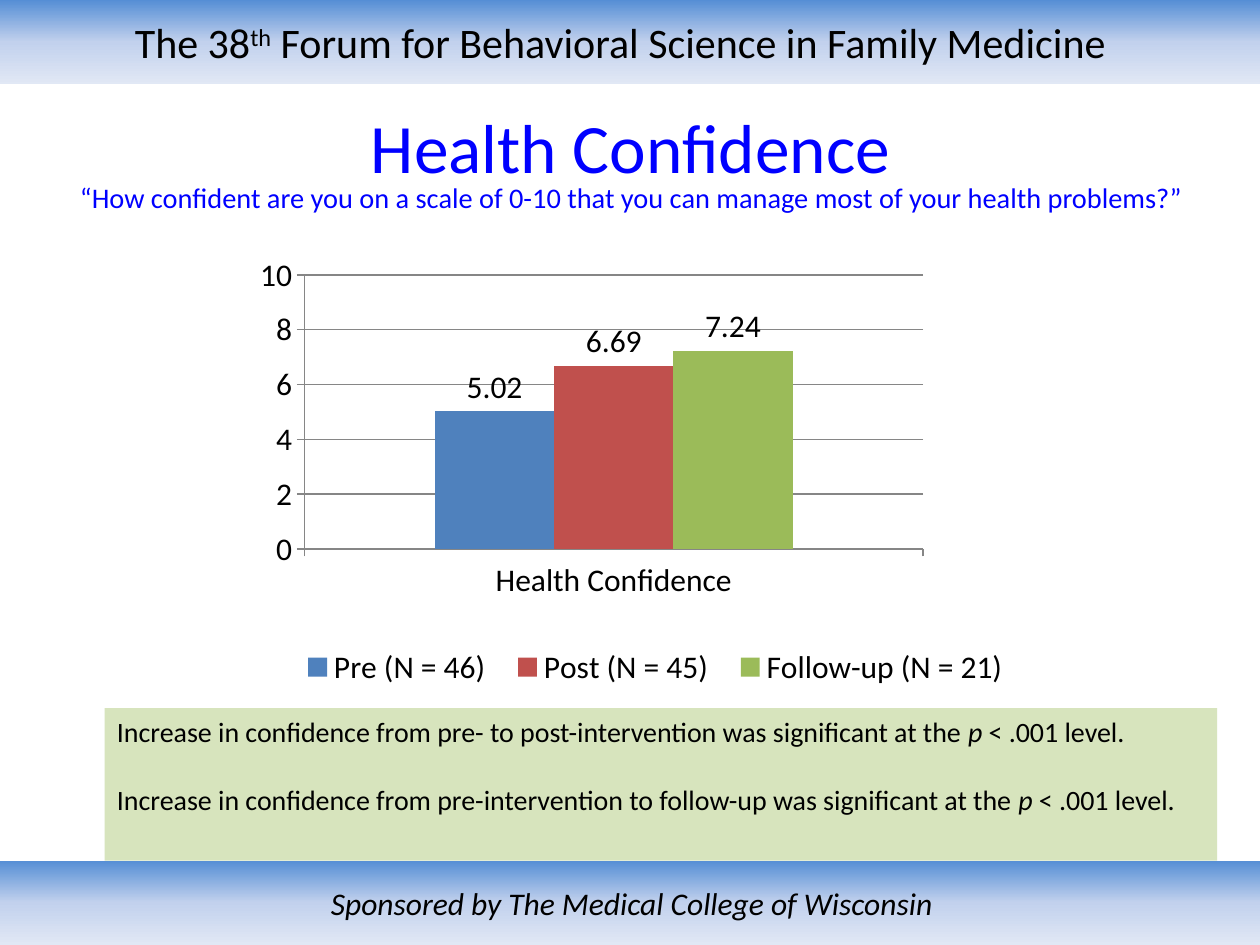
from lxml import etree
from pptx import Presentation
from pptx.chart.data import CategoryChartData
from pptx.dml.color import RGBColor
from pptx.enum.chart import XL_CHART_TYPE, XL_LABEL_POSITION, XL_LEGEND_POSITION, XL_TICK_MARK
from pptx.enum.shapes import MSO_SHAPE
from pptx.enum.text import MSO_ANCHOR, PP_ALIGN
from pptx.oxml import parse_xml
from pptx.oxml.ns import nsdecls, qn
from pptx.util import Inches, Pt

RECTANGLE = MSO_SHAPE.RECTANGLE
CENTER, LEFT = PP_ALIGN.CENTER, PP_ALIGN.LEFT
MIDDLE, TOP, BOTTOM = MSO_ANCHOR.MIDDLE, MSO_ANCHOR.TOP, MSO_ANCHOR.BOTTOM
COLUMNS = XL_CHART_TYPE.COLUMN_CLUSTERED
OUTSIDE = XL_TICK_MARK.OUTSIDE

FONT = "Calibri"
COLORS = {
    "text": "000000", "title": "0000FF", "note": "D7E4BD", "grid": "868686",
    "pre": "4F81BD", "post": "C0504D", "follow_up": "9BBB59",
}
BAND_STOPS = [(0, "558ED5"), (50, "C2D1ED"), (100, "E1E8F5")]
SERIES = [
    ("Pre (N = 46)", 5.02, "pre"),
    ("Post (N = 45)", 6.69, "post"),
    ("Follow-up (N = 21)", 7.24, "follow_up"),
]
FINDINGS = [
    "Increase in confidence from pre- to post-intervention was significant at the ",
    "Increase in confidence from pre-intervention to follow-up was significant at the ",
]


def rgb(name):
    return RGBColor.from_string(COLORS[name])


def style_font(font, size, color="text"):
    font.name = FONT
    font.size = Pt(size)
    font.color.rgb = rgb(color)


def add_runs(paragraph, texts, size, color="text", align=LEFT):
    """Add one run per text, in a common style, and return the runs."""
    paragraph.alignment = align
    runs = []
    for text in texts:
        run = paragraph.add_run()
        run.text = text
        style_font(run.font, size, color)
        runs.append(run)
    return runs


def add_rectangle(slide, left, top, width, height, anchor):
    shape = slide.shapes.add_shape(
        RECTANGLE, Inches(left), Inches(top), Inches(width), Inches(height))
    shape.shadow.inherit = False
    shape.line.fill.background()
    shape.text_frame.word_wrap = True
    shape.text_frame.vertical_anchor = anchor
    return shape


def add_band(slide, top, width, texts, size):
    """Add a full-width band with a vertical gradient; return its runs."""
    shape = add_rectangle(slide, 0, top, width, 0.67, MIDDLE)
    stops = "".join(
        f'<a:gs pos="{position * 1000}"><a:srgbClr val="{color}"/></a:gs>'
        for position, color in BAND_STOPS)
    gradient = parse_xml(
        f'<a:gradFill {nsdecls("a")} rotWithShape="1"><a:gsLst>{stops}</a:gsLst>'
        '<a:lin ang="5400000" scaled="0"/></a:gradFill>')
    shape.element.spPr.find(qn("a:prstGeom")).addnext(gradient)
    return add_runs(shape.text_frame.paragraphs[0], texts, size, align=CENTER)


def add_title(slide, heading, question):
    box = slide.shapes.add_textbox(Inches(0.17), Inches(1), Inches(9.67), Inches(0.75))
    frame = box.text_frame
    frame.word_wrap = True
    frame.vertical_anchor = BOTTOM
    frame.margin_top = 0
    add_runs(frame.paragraphs[0], [heading], 39.6, "title", CENTER)
    paragraph = frame.add_paragraph()
    paragraph.line_spacing = 0.78
    add_runs(paragraph, [question], 16.2, "title", CENTER)


def manual_layout(x, y, width, height, inner=False):
    """Build a chart layout from fractions of the chart area."""
    layout = etree.Element(qn("c:layout"))
    manual = etree.SubElement(layout, qn("c:manualLayout"))
    values = [("layoutTarget", "inner")] if inner else []
    values += [("xMode", "edge"), ("yMode", "edge"),
               ("x", x), ("y", y), ("w", width), ("h", height)]
    for tag, value in values:
        etree.SubElement(manual, qn(f"c:{tag}")).set("val", str(value))
    return layout


def add_confidence_chart(slide):
    data = CategoryChartData(number_format="General")
    data.categories = ["Health Confidence"]
    for name, value, _ in SERIES:
        data.add_series(name, [value])
    chart = slide.shapes.add_chart(
        COLUMNS, Inches(1.83), Inches(1.92), Inches(7.33), Inches(3.75), data).chart
    chart.has_title = False
    style_font(chart.font, 18)

    # Columns and value labels
    plot = chart.plots[0]
    plot.gap_width = 219
    plot.overlap = 0
    plot.vary_by_categories = False
    for series, (_, _, color) in zip(plot.series, SERIES):
        series.format.fill.solid()
        series.format.fill.fore_color.rgb = rgb(color)
        labels = series.data_labels
        labels.show_value = True
        labels.position = XL_LABEL_POSITION.OUTSIDE_END

    # Axes
    value_axis = chart.value_axis
    value_axis.minimum_scale, value_axis.maximum_scale = 0, 10
    value_axis.major_unit = 2
    value_axis.has_major_gridlines = True
    for axis in (value_axis, chart.category_axis):
        axis.major_tick_mark = OUTSIDE
    for part in (value_axis, chart.category_axis, value_axis.major_gridlines):
        part.format.line.color.rgb = rgb("grid")
        part.format.line.width = Pt(0.75)

    # Legend and placement
    chart.has_legend = True
    legend = chart.legend
    legend.position = XL_LEGEND_POSITION.BOTTOM
    legend.include_in_layout = False
    plot_area = chart.element.find(f".//{qn('c:plotArea')}")
    for old_layout in chart.element.findall(f".//{qn('c:layout')}"):
        old_layout.getparent().remove(old_layout)
    plot_area.insert(0, manual_layout(0.08, 0.07, 0.67, 0.58, inner=True))
    legend_position = chart.element.find(f".//{qn('c:legendPos')}")
    legend_position.addnext(manual_layout(0.06, 0.84, 0.8, 0.12))


def add_findings(slide):
    shape = add_rectangle(slide, 0.83, 5.62, 8.83, 1.21, TOP)
    shape.fill.solid()
    shape.fill.fore_color.rgb = rgb("note")
    frame = shape.text_frame
    for index, finding in enumerate(FINDINGS):
        paragraph = frame.add_paragraph() if index else frame.paragraphs[0]
        if index:
            paragraph.space_before = Pt(19.5)
        runs = add_runs(paragraph, [finding, "p", " < .001 level."], 16)
        runs[1].font.italic = True


def main():
    presentation = Presentation()
    presentation.slide_width = Inches(10)
    presentation.slide_height = Inches(7.5)
    slide = presentation.slides.add_slide(presentation.slide_layouts[6])

    # Header and footer bands
    header = add_band(
        slide, 0, 10,
        ["The 38", "th", " Forum for Behavioral Science in Family Medicine  "], 24)
    header[1].font._element.set("baseline", "30000")
    footer = add_band(
        slide, 6.83, 10.03, ["Sponsored by The Medical College of Wisconsin"], 18)
    footer[0].font.italic = True

    # Content
    add_title(
        slide, "Health Confidence",
        "“How confident are you on a scale of 0-10 that you can manage "
        "most of your health problems?”")
    add_confidence_chart(slide)
    add_findings(slide)
    presentation.save("out.pptx")


if __name__ == "__main__":
    main()
